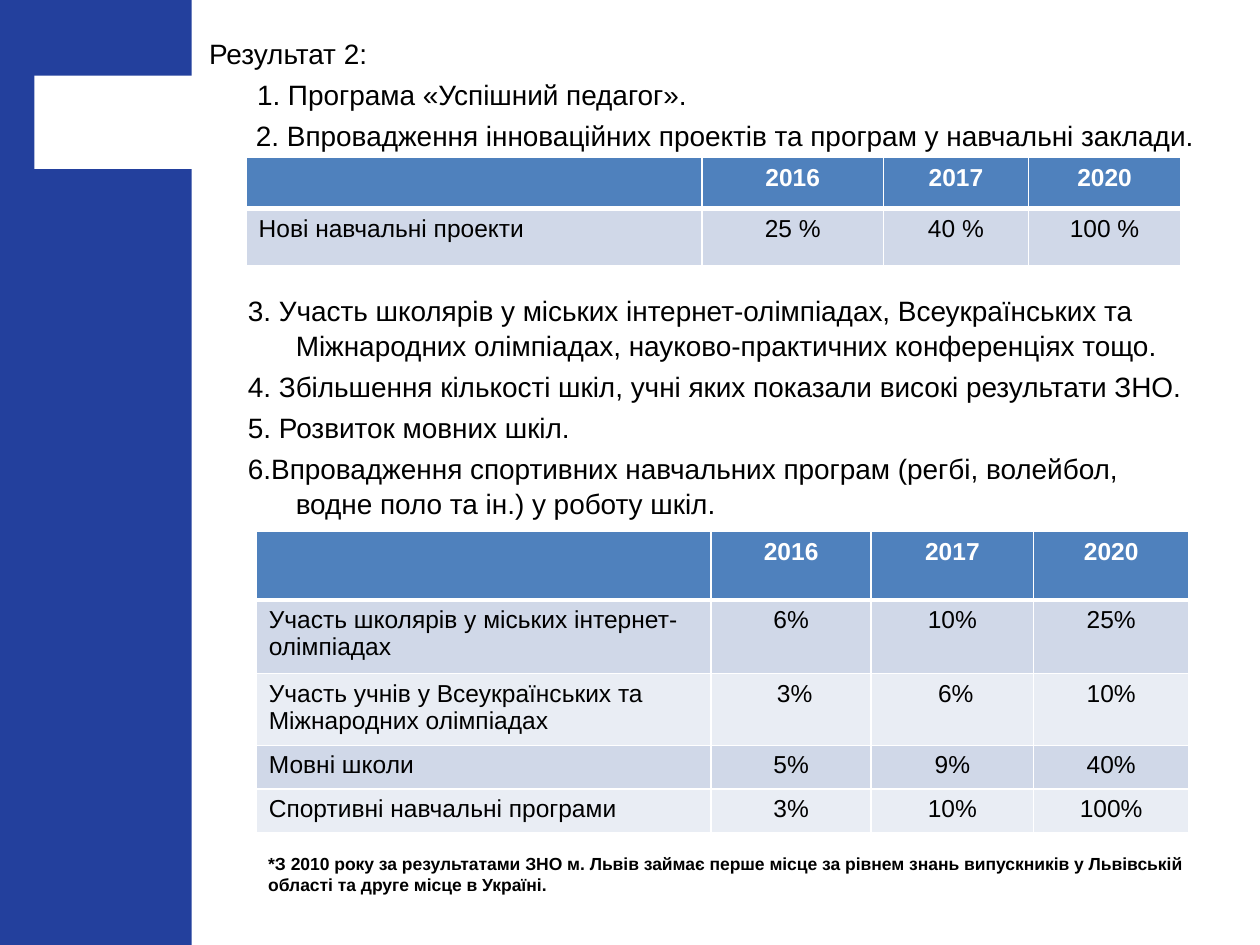
from lxml.etree import SubElement
from pptx import Presentation
from pptx.dml.color import RGBColor
from pptx.enum.shapes import MSO_SHAPE
from pptx.enum.text import MSO_AUTO_SIZE, PP_ALIGN
from pptx.oxml.ns import qn
from pptx.util import Pt

COLORS = {"bar": "23409D", "white": "FFFFFF", "black": "000000",
          "header": "4F81BD", "band1": "D0D8E8", "band2": "E9EDF4"}
FONT = "Arial"
HANG = 27.36
YEARS = ["", "2016", "2017", "2020"]

GOALS = ["Результат 2:",
         "1. Програма «Успішний педагог».",
         "2. Впровадження інноваційних проектів та програм у навчальні заклади."]
MORE_GOALS = [
    "3. Участь школярів у міських інтернет-олімпіадах, Всеукраїнських та "
    "Міжнародних олімпіадах, науково-практичних конференціях тощо.",
    "4. Збільшення кількості шкіл, учні яких показали високі результати ЗНО.",
    "5. Розвиток мовних шкіл.",
    "6.Впровадження спортивних навчальних програм (регбі, волейбол, "
    "водне поло та ін.) у роботу шкіл."]
FOOTNOTE = ("*З 2010 року за результатами ЗНО м. Львів займає перше місце за рівнем "
            "знань випускників у Львівській області та друге місце в Україні.")
PROJECTS = [YEARS, ["Нові навчальні проекти", "25 %", "40 %", "100 %"]]
INDICATORS = [
    YEARS,
    ["Участь школярів у міських інтернет-олімпіадах", "6%", "10%", "25%"],
    ["Участь учнів у Всеукраїнських та Міжнародних олімпіадах", " 3%", " 6%", "10%"],
    ["Мовні школи", "5%", "9%", "40%"],
    ["Спортивні навчальні програми", "3%", "10%", "100%"]]


def rgb(name):
    return RGBColor.from_string(COLORS[name])


def write(p, text, size=16, color="black", bold=False, align=PP_ALIGN.LEFT,
          before=0, spacing=None, left=0, indent=0):
    pPr = p._p.get_or_add_pPr()
    pPr.set("marL", str(Pt(left)))
    pPr.set("indent", str(Pt(indent)))
    SubElement(pPr, qn("a:buNone"))
    p.alignment = align
    p.space_before = Pt(before)
    if spacing:
        p.line_spacing = spacing
    r = p.add_run()
    r.text = text
    r.font.name, r.font.size, r.font.bold = FONT, Pt(size), bold
    r.font.color.rgb = rgb(color)


def write_list(tf, items, indents):
    """Fill tf with one paragraph per item; indents holds (left, first line) pairs."""
    tf.word_wrap = True
    tf.auto_size = MSO_AUTO_SIZE.NONE
    for i, (item, (left, indent)) in enumerate(zip(items, indents)):
        p = tf.paragraphs[0] if i == 0 else tf.add_paragraph()
        write(p, item, before=3.2 if i else 0, spacing=1.05, left=left, indent=indent)


def add_side_bar(s, body, x, y, w, h):
    """Blue bar with a white notch, kept behind the body text."""
    for box, color in [((x, y, w, h), "bar"),
                       ((x + 19.6, y + 43.2, w - 13.6, 53.3), "white")]:
        sp = s.shapes.add_shape(MSO_SHAPE.RECTANGLE, *map(Pt, box))
        sp.shadow.inherit = False
        sp.fill.solid()
        sp.fill.fore_color.rgb = rgb(color)
        sp.line.fill.background()
        body.element.addprevious(sp.element)


def place_goals(body, x, y, w, h):
    body.left, body.top, body.width, body.height = map(Pt, (x, y, w, h))
    write_list(body.text_frame, GOALS, [(HANG, -HANG), (HANG, 0), (HANG, -0.6)])


def add_more_goals(s, x, y, w, h):
    tf = s.shapes.add_textbox(*map(Pt, (x, y, w, h))).text_frame
    write_list(tf, MORE_GOALS, [(HANG, -HANG)] * len(MORE_GOALS))


def add_footnote(s, x, y, w, h):
    tf = s.shapes.add_textbox(*map(Pt, (x, y, w, h))).text_frame
    tf.word_wrap = True
    write(tf.paragraphs[0], FOOTNOTE, size=10, bold=True)


def set_borders(cell, top=1, bottom=1):
    tcPr = cell._tc.get_or_add_tcPr()
    for side, width in zip("LRTB", (1, 1, top, bottom)):
        ln = SubElement(tcPr, qn(f"a:ln{side}"), w=str(Pt(width)))
        fill = SubElement(ln, qn("a:solidFill"))
        SubElement(fill, qn("a:srgbClr"), val=COLORS["white"])


def add_year_table(s, x, y, rows, widths, heights):
    """Header row of years above banded rows, label column first."""
    box = map(Pt, (x, y, sum(widths), sum(heights)))
    table = s.shapes.add_table(len(rows), len(widths), *box).table
    table.horz_banding = False
    for col, width in zip(table.columns, widths):
        col.width = Pt(width)
    for i, (row, height) in enumerate(zip(rows, heights)):
        table.rows[i].height = Pt(height)
        fill = "header" if i == 0 else ("band2", "band1")[i % 2]
        for j, text in enumerate(row):
            cell = table.cell(i, j)
            set_borders(cell, top=3 if i == 1 else 1, bottom=3 if i == 0 else 1)
            cell.fill.solid()
            cell.fill.fore_color.rgb = rgb(fill)
            if text:
                write(cell.text_frame.paragraphs[0], text, size=14, bold=i == 0,
                      color="black" if i else "white",
                      align=PP_ALIGN.CENTER if j else PP_ALIGN.LEFT)


def main():
    prs = Presentation()
    prs.slide_width, prs.slide_height = Pt(720), Pt(540)
    s = prs.slides.add_slide(prs.slide_layouts[1])
    title = s.shapes.title.element
    title.getparent().remove(title)
    body = s.placeholders[1]

    add_side_bar(s, body, 0, 0, 109.6, 540)
    place_goals(body, 112.3, 16.6, 590.4, 73.4)
    add_year_table(s, 140.6, 90, PROJECTS, [260.6, 103.7, 82.8, 87], [28.8, 32.4])
    add_more_goals(s, 134.6, 163.4, 556.6, 135.4)
    add_year_table(s, 146.4, 303.8, INDICATORS, [260, 91.4, 92.9, 88.6],
                   [39, 42.2, 41, 25, 25])
    add_footnote(s, 146.2, 483.8, 540, 31.7)
    prs.save("out.pptx")


if __name__ == "__main__":
    main()
